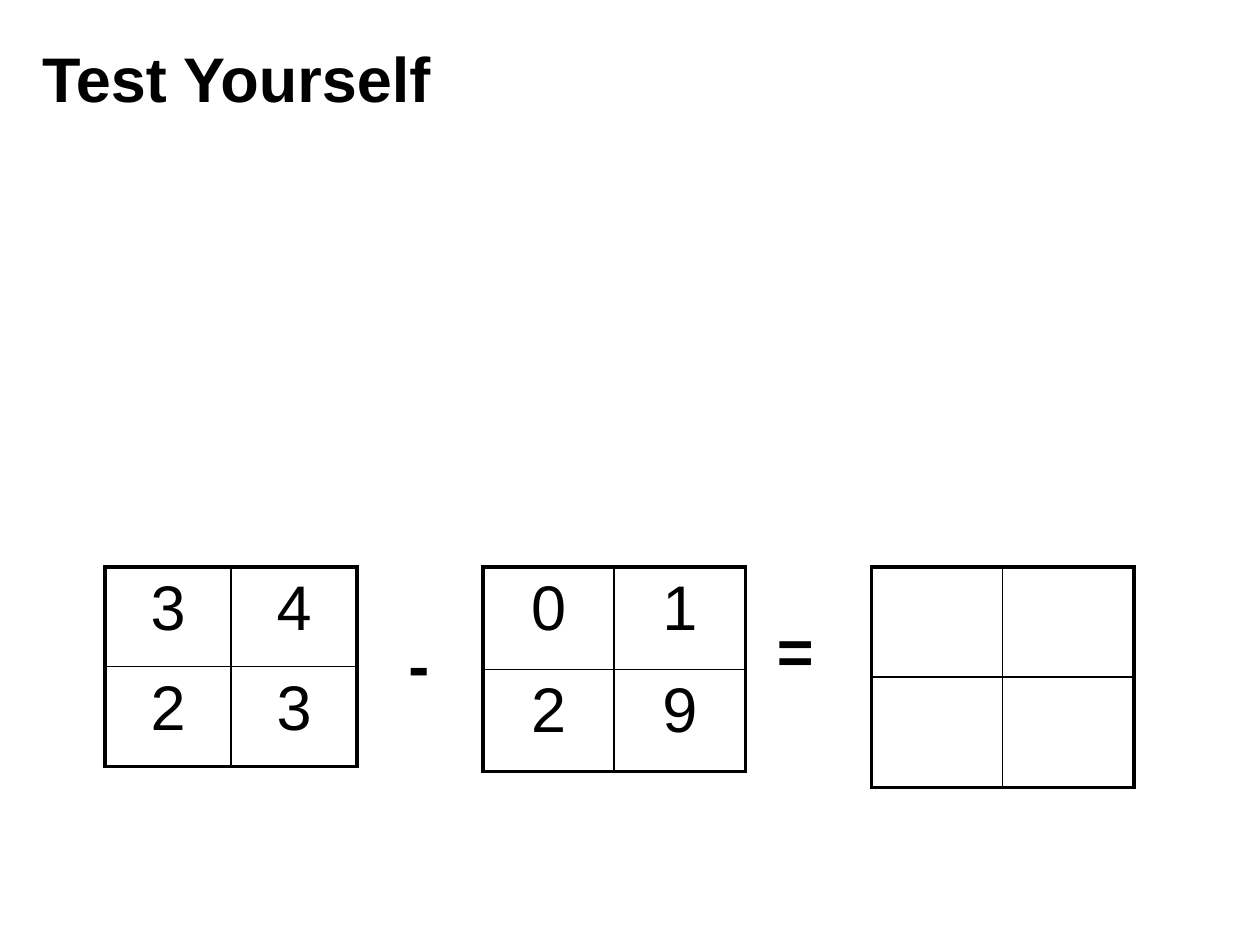
from dataclasses import dataclass

from lxml.etree import SubElement
from pptx import Presentation
from pptx.dml.color import RGBColor
from pptx.enum.text import MSO_ANCHOR, MSO_AUTO_SIZE, PP_ALIGN
from pptx.oxml.ns import qn
from pptx.util import Inches, Pt


@dataclass(frozen=True)
class Theme:
    font: str = "Arial"
    ink: str = "000000"
    paper: str = "FFFFFF"
    size: int = 36
    outer_line: float = 2.25
    inner_line: float = 1


THEME = Theme()
COLUMNS, ROWS = 120, 90
PAGE_WIDTH, PAGE_HEIGHT = Inches(10), Inches(7.5)


def grid_box(left, top, width, height):
    column, row = PAGE_WIDTH / COLUMNS, PAGE_HEIGHT / ROWS
    return int(left * column), int(top * row), int(width * column), int(height * row)


def write(para, text, align, bold=False):
    para.alignment = align
    span = para.add_run()
    span.text = text
    span.font.name = THEME.font
    span.font.size = Pt(THEME.size)
    span.font.bold = bold
    span.font.color.rgb = RGBColor.from_string(THEME.ink)


def add_title(page, text, box):
    title = page.shapes.title
    title.left, title.top, title.width, title.height = box
    title.text_frame.vertical_anchor = MSO_ANCHOR.MIDDLE
    title.text_frame.auto_size = MSO_AUTO_SIZE.NONE
    write(title.text_frame.paragraphs[0], text, PP_ALIGN.LEFT, bold=True)


def set_borders(cell, outer_sides):
    properties = cell._tc.get_or_add_tcPr()
    for side in "LRTB":
        points = THEME.outer_line if side in outer_sides else THEME.inner_line
        line = SubElement(properties, qn(f"a:ln{side}"), w=str(Pt(points)))
        fill = SubElement(line, qn("a:solidFill"))
        SubElement(fill, qn("a:srgbClr"), val=THEME.ink)


def add_matrix(page, values, box):
    left, top, width, height = box
    count = len(values)
    table = page.shapes.add_table(count, count, left, top, width, height).table
    table.first_row = table.horz_banding = False
    for row_index, row in enumerate(values):
        for column_index, value in enumerate(row):
            cell = table.cell(row_index, column_index)
            edges = {"L": column_index == 0, "R": column_index == count - 1,
                     "T": row_index == 0, "B": row_index == count - 1}
            set_borders(cell, [side for side, outer in edges.items() if outer])
            cell.fill.background()
            if value:
                write(cell.text_frame.paragraphs[0], value, PP_ALIGN.CENTER)


def add_operator(page, symbol, box):
    frame = page.shapes.add_textbox(*box).text_frame
    frame.word_wrap = False
    frame.auto_size = MSO_AUTO_SIZE.SHAPE_TO_FIT_TEXT
    write(frame.paragraphs[0], symbol, PP_ALIGN.CENTER, bold=True)


def build_exercise(page):
    background = page.background.fill
    background.solid()
    background.fore_color.rgb = RGBColor.from_string(THEME.paper)
    add_title(page, "Test Yourself", grid_box(2.8, 1.8, 96.4, 11.2))
    matrices = [
        (["34", "23"], 10, 24, 19),
        (["01", "29"], 46, 25, 19.5),
        ([["", ""], ["", ""]], 83, 25, 21),
    ]
    for values, left, width, height in matrices:
        add_matrix(page, values, grid_box(left, 54, width, height))
    add_operator(page, "-", grid_box(37.7, 59, 4.4, 8.5))
    add_operator(page, "=", grid_box(72.8, 57.6, 5.9, 8.5))


def main():
    deck = Presentation()
    deck.slide_width, deck.slide_height = PAGE_WIDTH, PAGE_HEIGHT
    build_exercise(deck.slides.add_slide(deck.slide_layouts[5]))
    deck.save("out.pptx")


if __name__ == "__main__":
    main()
